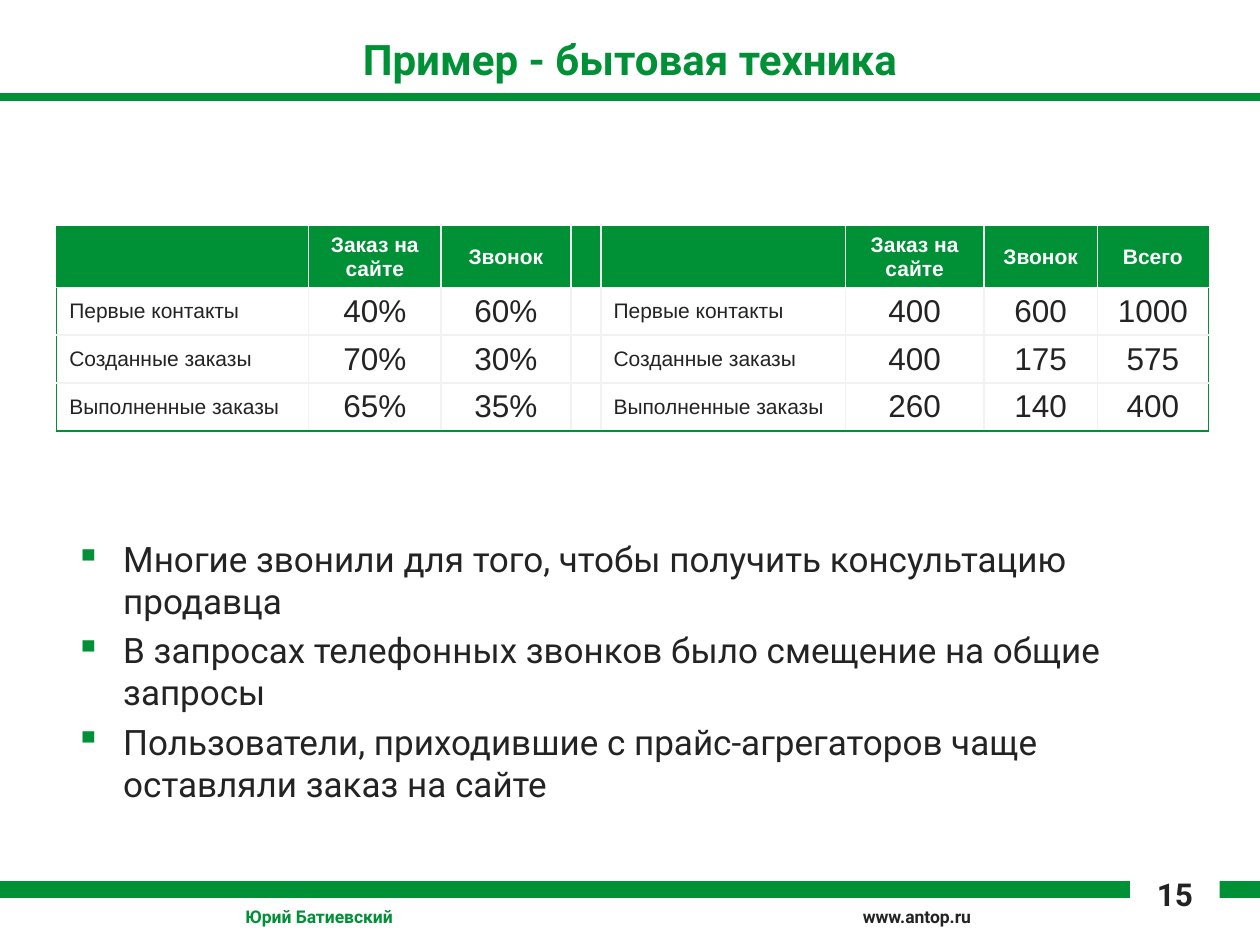
from pptx import Presentation
from pptx.dml.color import RGBColor
from pptx.enum.shapes import MSO_CONNECTOR, MSO_SHAPE
from pptx.enum.text import MSO_ANCHOR, PP_ALIGN
from pptx.oxml.ns import qn
from pptx.util import Inches, Pt
from lxml import etree

GREEN = RGBColor(0x00, 0x90, 0x36)
DARK = RGBColor(0x23, 0x23, 0x23)
PALE = RGBColor(0xF2, 0xF2, 0xF2)
WHITE = RGBColor(0xFF, 0xFF, 0xFF)
LEFT, CENTER = PP_ALIGN.LEFT, PP_ALIGN.CENTER
TOP, MIDDLE = MSO_ANCHOR.TOP, MSO_ANCHOR.MIDDLE
STRAIGHT, RECT = MSO_CONNECTOR.STRAIGHT, MSO_SHAPE.RECTANGLE

COLS = [2, 1.05, 1.03, 0.24, 1.94, 1.1, 0.9, 0.88]
ROWS = [0.48, 0.38, 0.38, 0.38]
LABELS = (0, 4)
DATA = [
    ["", "Заказ на сайте", "Звонок", "", "", "Заказ на сайте", "Звонок", "Всего"],
    ["Первые контакты", "40%", "60%", "", "Первые контакты", "400", "600", "1000"],
    ["Созданные заказы", "70%", "30%", "", "Созданные заказы", "400", "175", "575"],
    ["Выполненные заказы", "65%", "35%", "", "Выполненные заказы", "260", "140", "400"],
]
POINTS = [
    "Многие звонили для того, чтобы получить консультацию продавца",
    "В запросах телефонных звонков было смещение на общие запросы",
    "Пользователи, приходившие с прайс-агрегаторов чаще оставляли заказ на сайте",
]


def add_run(para, text, size, color, bold=False, face="Roboto"):
    run = para.add_run()
    run.text = text
    font = run.font
    font.name, font.size, font.bold = face, Pt(size), bold
    font.color.rgb = color


def add_box(slide, box, anchor=TOP):
    frame = slide.shapes.add_textbox(*map(Inches, box)).text_frame
    frame.word_wrap = True
    frame.vertical_anchor = anchor
    return frame


def add_line(slide, y, width, weight):
    line = slide.shapes.add_connector(
        STRAIGHT, Inches(0), Inches(y), Inches(width), Inches(y))
    line.line.color.rgb = GREEN
    line.line.width = Pt(weight)
    etree.SubElement(line.element.spPr, qn("a:effectLst"))


def add_title(slide, box):
    para = add_box(slide, box, MIDDLE).paragraphs[0]
    para.alignment = CENTER
    add_run(para, "Пример - бытовая техника", 24, GREEN, True)


def set_border(cell, colors):
    props = cell._tc.get_or_add_tcPr()
    # Borders come before the fill in the cell properties
    for i, (side, color) in enumerate(zip("LRTB", colors)):
        edge = etree.Element(qn("a:ln" + side), w=str(Pt(1)))
        fill = etree.SubElement(edge, qn("a:solidFill"))
        etree.SubElement(fill, qn("a:srgbClr"), val=str(color))
        props.insert(i, edge)


def add_grid(slide, left, top):
    grid = slide.shapes.add_table(
        len(ROWS), len(COLS), Inches(left), Inches(top),
        Inches(sum(COLS)), Inches(sum(ROWS))).table
    for col, width in zip(grid.columns, COLS):
        col.width = Inches(width)
    for row, height in zip(grid.rows, ROWS):
        row.height = Inches(height)
    for r, texts in enumerate(DATA):
        head = r == 0
        for c, text in enumerate(texts):
            cell = grid.cell(r, c)
            cell.fill.solid()
            cell.fill.fore_color.rgb = GREEN if head else WHITE
            cell.margin_top = cell.margin_bottom = Inches(0.03)
            cell.vertical_anchor = MIDDLE
            # Green outside, pale inside
            outer = (c == 0, c == len(COLS) - 1, head, r == len(ROWS) - 1)
            set_border(cell, [GREEN if out else PALE for out in outer])
            if text:
                label = c in LABELS
                para = cell.text_frame.paragraphs[0]
                para.alignment = LEFT if label else CENTER
                add_run(para, text, 12 if head or label else 18,
                        WHITE if head else DARK, head, "Arial")


def add_bullet(para):
    props = para._p.get_or_add_pPr()
    props.set("marL", str(Inches(0.38)))
    props.set("indent", str(-Inches(0.38)))
    color = etree.SubElement(props, qn("a:buClr"))
    etree.SubElement(color, qn("a:srgbClr"), val=str(GREEN))
    etree.SubElement(props, qn("a:buChar"), char="▪")


def add_points(slide, box):
    frame = add_box(slide, box)
    for i, text in enumerate(POINTS):
        para = frame.add_paragraph() if i else frame.paragraphs[0]
        add_bullet(para)
        if i:
            para.space_before = Pt(4)
        add_run(para, text, 20, DARK)


def add_footer(slide, top):
    add_line(slide, top + 0.21, 10, 10)
    for left, width, text, color in [
        (1.85, 4.5, "Юрий Батиевский", GREEN),
        (6.75, 2.2, "www.antop.ru", DARK),
    ]:
        para = add_box(slide, (left, top + 0.29, width, 0.24)).paragraphs[0]
        add_run(para, text, 10, color, True)
    # Page number over the green line
    page = slide.shapes.add_shape(
        RECT, Inches(8.97), Inches(top), Inches(0.71), Inches(0.65))
    page.shadow.inherit = False
    page.fill.solid()
    page.fill.fore_color.rgb = WHITE
    page.line.fill.background()
    page.text_frame.vertical_anchor = TOP
    para = page.text_frame.paragraphs[0]
    para.alignment = CENTER
    para.line_spacing = 1.15
    add_run(para, "15", 18, DARK, True)


def main():
    deck = Presentation()
    deck.slide_width, deck.slide_height = Inches(10), Inches(7.5)
    slide = deck.slides.add_slide(deck.slide_layouts[6])
    add_line(slide, 0.77, 10, 5)
    add_title(slide, (0.51, 0.21, 8.98, 0.51))
    add_grid(slide, 0.45, 1.8)
    add_points(slide, (0.5, 4.22, 9, 2.29))
    add_footer(slide, 6.85)
    deck.save("out.pptx")


if __name__ == "__main__":
    main()
